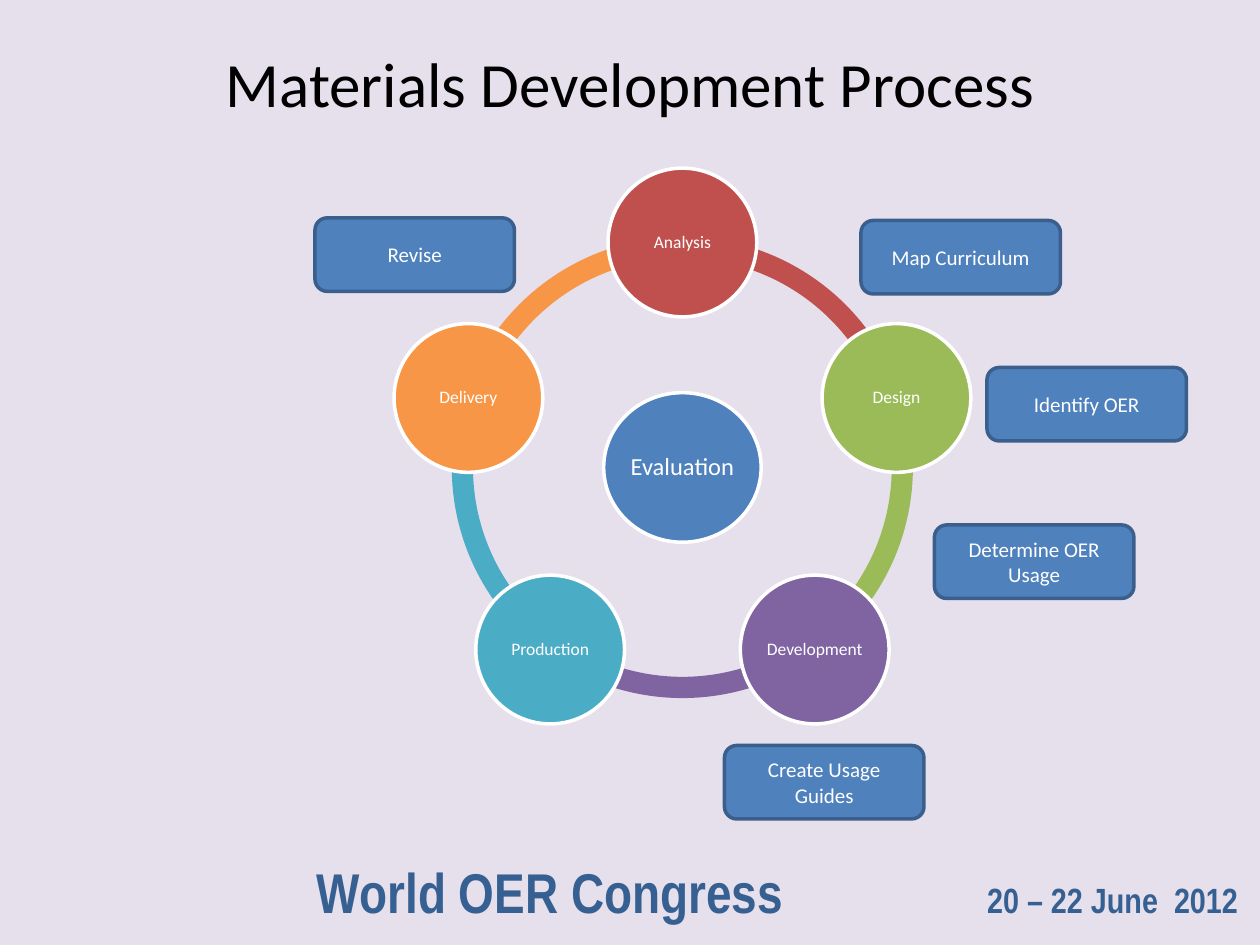
from math import cos, radians, sin

from lxml.etree import SubElement
from pptx import Presentation
from pptx.dml.color import RGBColor as Rgb
from pptx.enum.shapes import MSO_SHAPE as Shape
from pptx.enum.text import MSO_ANCHOR as Anchor, PP_ALIGN as Align
from pptx.oxml.ns import qn
from pptx.util import Pt

HUES = {
    "back": "E6E0EC", "ink": "000000", "white": "FFFFFF", "foot": "376092",
    "blue": "4F81BD", "edge": "3A5F8C", "red": "C0504D", "green": "9BBB59",
    "plum": "8064A2", "teal": "4BACC6", "gold": "F79646",
}
STEPS = [("Analysis", "red"), ("Design", "green"), ("Development", "plum"),
         ("Production", "teal"), ("Delivery", "gold")]
TASKS = [("Map Curriculum", 492, 126), ("Identify OER", 564, 210),
         ("Determine OER Usage", 534, 300), ("Create Usage Guides", 414, 426),
         ("Revise", 180, 124.5)]


def hue(name):
    """Return the named colour."""
    return Rgb.from_string(HUES[name])


def style(para, size, color, face="Calibri"):
    """Set the font of a paragraph."""
    font = para.font
    font.name, font.size = face, Pt(size)
    font.color.rgb = hue(color)


def draw(slide, kind, box, fill, line=None):
    """Add a flat filled shape in a box."""
    shape = slide.shapes.add_shape(kind, *map(Pt, box))
    shape.shadow.inherit = False
    shape.fill.solid()
    shape.fill.fore_color.rgb = hue(fill)
    if line:
        shape.line.color.rgb = hue(line)
        shape.line.width = Pt(2)
    else:
        shape.line.fill.background()
    return shape


def label(shape, text, size, color="white"):
    """Centre one line of text in a shape and return its paragraph."""
    frame = shape.text_frame
    frame.word_wrap = True
    frame.vertical_anchor = Anchor.MIDDLE
    para = frame.paragraphs[0]
    para.text, para.alignment = text, Align.CENTER
    style(para, size, color)
    return para


def disc(slide, mid, wide, high, text, size, fill):
    """Add a labelled ellipse around a midpoint."""
    box = mid[0] - wide / 2, mid[1] - high / 2, wide, high
    shape = draw(slide, Shape.OVAL, box, fill, "white")
    frame = shape.text_frame
    frame.margin_left = frame.margin_right = Pt(1)
    frame.margin_top = frame.margin_bottom = Pt(1)
    label(shape, text, size).line_spacing = 0.9


def cycle(slide, box):
    """Draw the ring of steps around its hub."""
    left, top, side, _ = box
    mid = left + side / 2, top + side / 2
    turn = 360 / len(STEPS)
    reach = side * 0.488
    angles = [(270 + i * turn) % 360 for i in range(len(STEPS))]
    for angle, (_, fill) in zip(angles, STEPS):
        arc = draw(slide, Shape.BLOCK_ARC, box, fill)
        arc.adjustments[0] = angle * 0.6
        arc.adjustments[1] = (angle + turn) % 360 * 0.6
        arc.adjustments[2] = 0.046
    disc(slide, mid, 90, 85.5, "Evaluation", 14, "blue")
    for angle, (text, fill) in zip(angles, STEPS):
        rad = radians(angle)
        spot = mid[0] + reach * cos(rad), mid[1] + reach * sin(rad)
        disc(slide, spot, 85, 85, text, 10, fill)


def tasks(slide, size):
    """Place the task boxes around the ring."""
    for text, left, top in TASKS:
        box = left, top, *size
        label(draw(slide, Shape.ROUNDED_RECTANGLE, box, "blue", "edge"), text, 12)


def title(slide, box):
    """Place the heading."""
    shape = slide.shapes.add_textbox(*map(Pt, box))
    label(shape, "Materials Development Process", 36, "ink")


def footer(slide, box):
    """Place the event name and, after a tab, its date."""
    frame = slide.shapes.add_textbox(*map(Pt, box)).text_frame
    frame.word_wrap = True
    para = frame.paragraphs[0]
    props = para._p.get_or_add_pPr()
    tabs = SubElement(props, qn("a:tabLst"))
    SubElement(tabs, qn("a:tab"), pos=str(Pt(383)), algn="l")
    style(para, 32, "foot", "Arial Narrow")
    para.font.bold = True
    para.add_run().text = "World OER Congress\t"
    date = para.add_run()
    date.text = "20 – 22 June  2012"
    date.font.size = Pt(20)


def main():
    """Build and save the slide."""
    deck = Presentation()
    deck.slide_width, deck.slide_height = Pt(720), Pt(540)
    slide = deck.slides.add_slide(deck.slide_layouts[6])
    slide.background.fill.solid()
    slide.background.fill.fore_color.rgb = hue("back")
    footer(slide, (174, 486.5, 546, 46))
    title(slide, (0, 21.6, 720, 50.4))
    cycle(slide, (258.2, 135.4, 263.5, 263.5))
    tasks(slide, (114, 42))
    deck.save("out.pptx")


if __name__ == "__main__":
    main()
